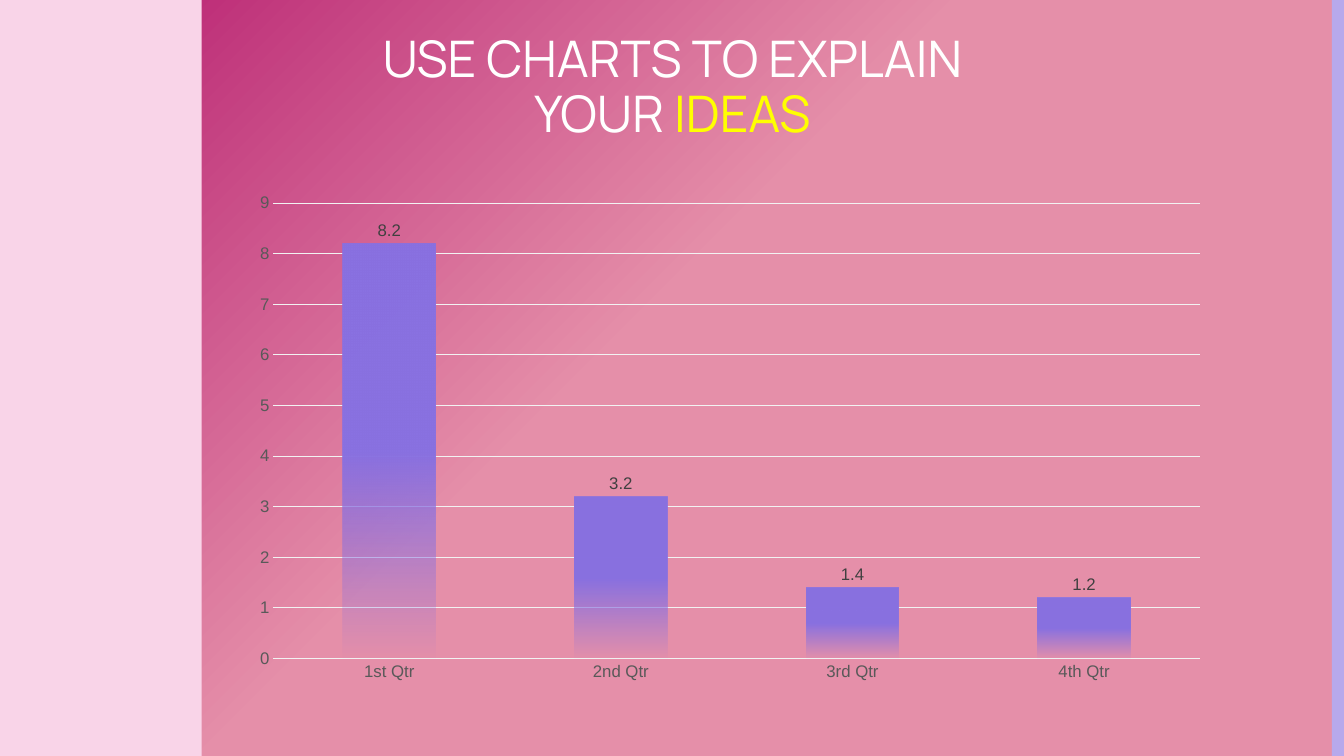
from lxml import etree
from pptx import Presentation
from pptx.chart.data import CategoryChartData
from pptx.dml.color import RGBColor
from pptx.enum.chart import XL_CHART_TYPE, XL_LABEL_POSITION, XL_TICK_MARK
from pptx.enum.shapes import MSO_SHAPE
from pptx.enum.text import MSO_ANCHOR, PP_ALIGN
from pptx.oxml import parse_xml
from pptx.oxml.ns import nsdecls, qn
from pptx.util import Inches, Pt

COLORS = {
    "magenta": "B4176D", "rose": "E58FA9", "pale_pink": "F9D4E8",
    "lilac": "B7A9EC", "violet": "8971E1", "white": "FFFFFF",
    "yellow": "FFFF00", "grid": "F2F2F2", "axis_text": "595959",
    "label_text": "404040", "black": "000000",
}


def set_gradient(properties, stops, direction):
    """Replace a solid fill by a gradient of (percent, color, opacity) stops."""
    stop_xml = "".join(
        f'<a:gs pos="{percent * 1000}"><a:srgbClr val="{COLORS[color]}">'
        f'<a:alpha val="{opacity * 1000}"/></a:srgbClr></a:gs>'
        for percent, color, opacity in stops
    )
    gradient = parse_xml(
        f'<a:gradFill {nsdecls("a")} rotWithShape="1">'
        f"<a:gsLst>{stop_xml}</a:gsLst>{direction}</a:gradFill>"
    )
    properties.replace(properties.find(qn("a:solidFill")), gradient)


def format_text(font, text=None, size=12, color="black", name="Arial"):
    """Format a font; with a text, add that text to the paragraph given as font."""
    if text is not None:
        run = font.add_run()
        run.text = text
        font = run.font
    font.size = Pt(size)
    font.name = name
    font.color.rgb = RGBColor.from_string(COLORS[color])


presentation = Presentation()
presentation.slide_width = Inches(13.33)
presentation.slide_height = Inches(7.5)
slide = presentation.slides.add_slide(presentation.slide_layouts[6])

# Background fading from the top left corner
slide.background.fill.solid()
set_gradient(
    slide.element.find(".//" + qn("p:bgPr")),
    [(0, "magenta", 100), (46, "rose", 100), (100, "rose", 100)],
    '<a:path path="circle"><a:fillToRect r="100000" b="100000"/></a:path>',
)

# Side bands
for left, width, color in [(0, 2, "pale_pink"), (13.21, 0.12, "lilac")]:
    band = slide.shapes.add_shape(
        MSO_SHAPE.RECTANGLE, Inches(left), 0, Inches(width), Inches(7.5)
    )
    band.shadow.inherit = False
    band.fill.solid()
    band.fill.fore_color.rgb = RGBColor.from_string(COLORS[color])
    band.line.fill.background()

# Title
title = slide.shapes.add_textbox(Inches(3.43), Inches(0.16), Inches(6.48), Inches(1.36))
frame = title.text_frame
frame.word_wrap = True
frame.vertical_anchor = MSO_ANCHOR.BOTTOM
frame.margin_left = frame.margin_right = Inches(0.1)
frame.margin_top = frame.margin_bottom = Inches(0.1)
paragraph = frame.paragraphs[0]
paragraph.alignment = PP_ALIGN.CENTER
paragraph.line_spacing = 0.9
for text, color in [("USE CHARTS TO EXPLAIN YOUR ", "white"), ("IDEAS", "yellow")]:
    format_text(paragraph, text, size=36, color=color, name="Manrope")

# Column chart
chart_data = CategoryChartData()
chart_data.categories = ["1st Qtr", "2nd Qtr", "3rd Qtr", "4th Qtr"]
chart_data.add_series("Series 1", [8.2, 3.2, 1.4, 1.2])
chart = slide.shapes.add_chart(
    XL_CHART_TYPE.COLUMN_CLUSTERED,
    Inches(2.58), Inches(1.53), Inches(9.36), Inches(5.22), chart_data,
).chart
chart.has_legend = False
chart.has_title = False
format_text(chart.font, size=10)

for axis in (chart.category_axis, chart.value_axis):
    axis.major_tick_mark = axis.minor_tick_mark = XL_TICK_MARK.NONE
    axis.format.line.fill.background()
    format_text(axis.tick_labels.font, color="axis_text")
value_axis = chart.value_axis
value_axis.minimum_scale, value_axis.maximum_scale, value_axis.major_unit = 0, 9, 1
gridline = value_axis.major_gridlines.format.line
gridline.width = Pt(0.75)
gridline.color.rgb = RGBColor.from_string(COLORS["grid"])

plot = chart.plots[0]
plot.gap_width = 150
plot.vary_by_categories = False
series = plot.series[0]
series.format.fill.solid()
set_gradient(
    series.format.fill._xPr,
    [(50, "violet", 100), (100, "violet", 0)],
    '<a:lin ang="5400000" scaled="0"/>',
)
labels = series.data_labels
labels.show_value = True
labels.position = XL_LABEL_POSITION.OUTSIDE_END
format_text(labels.font, color="label_text")

# Fixed inner plot area, as fractions of the chart
plot_area = chart.element.find(".//" + qn("c:plotArea"))
layout = plot_area.find(qn("c:layout"))
if layout is None:
    layout = etree.Element(qn("c:layout"))
    plot_area.insert(0, layout)
manual = etree.SubElement(layout, qn("c:manualLayout"))
for tag, value in [
    ("layoutTarget", "inner"), ("xMode", "edge"), ("yMode", "edge"),
    ("x", "0.014"), ("y", "0.093"), ("w", "0.982"), ("h", "0.867"),
]:
    etree.SubElement(manual, qn("c:" + tag)).set("val", value)

presentation.save("out.pptx")
